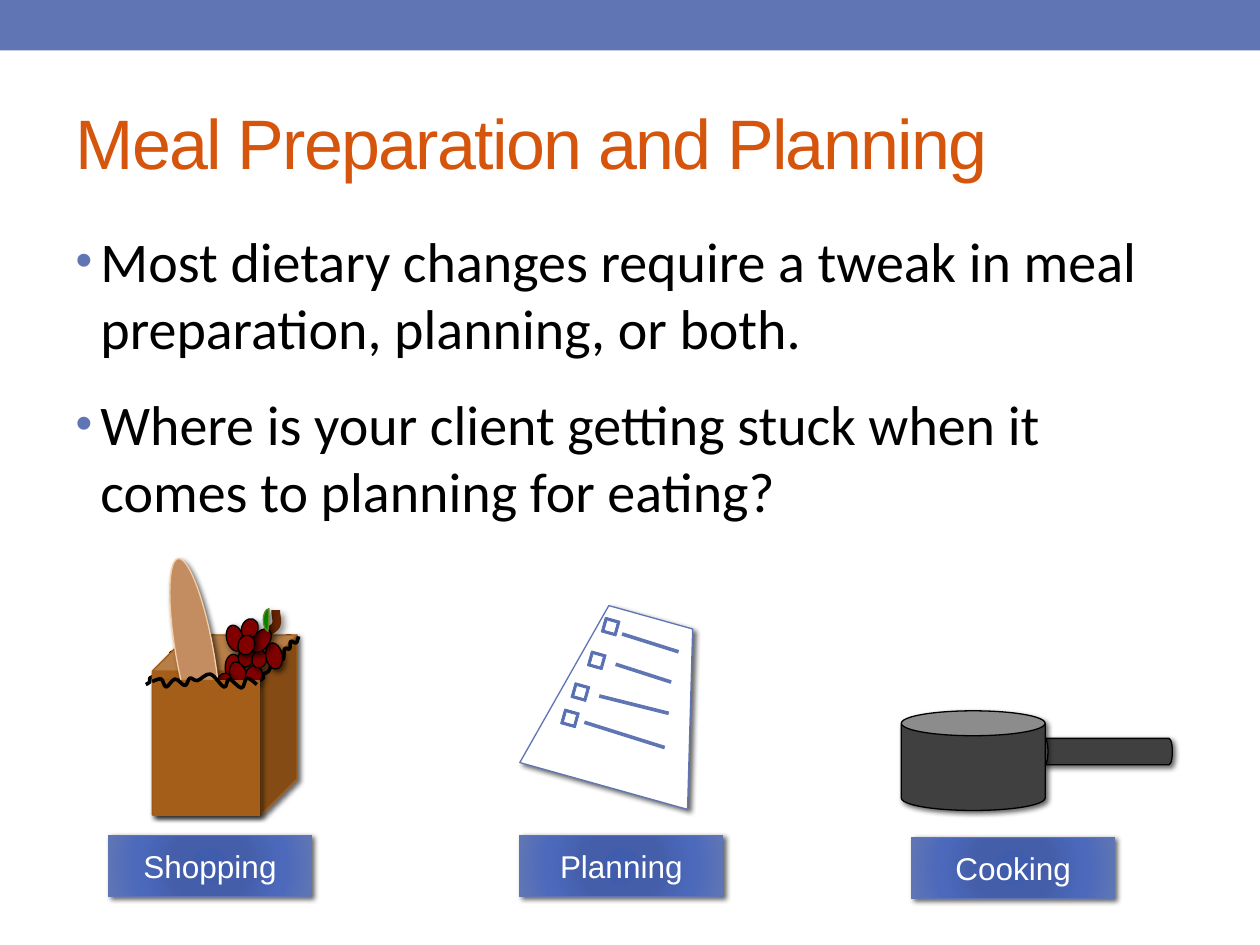
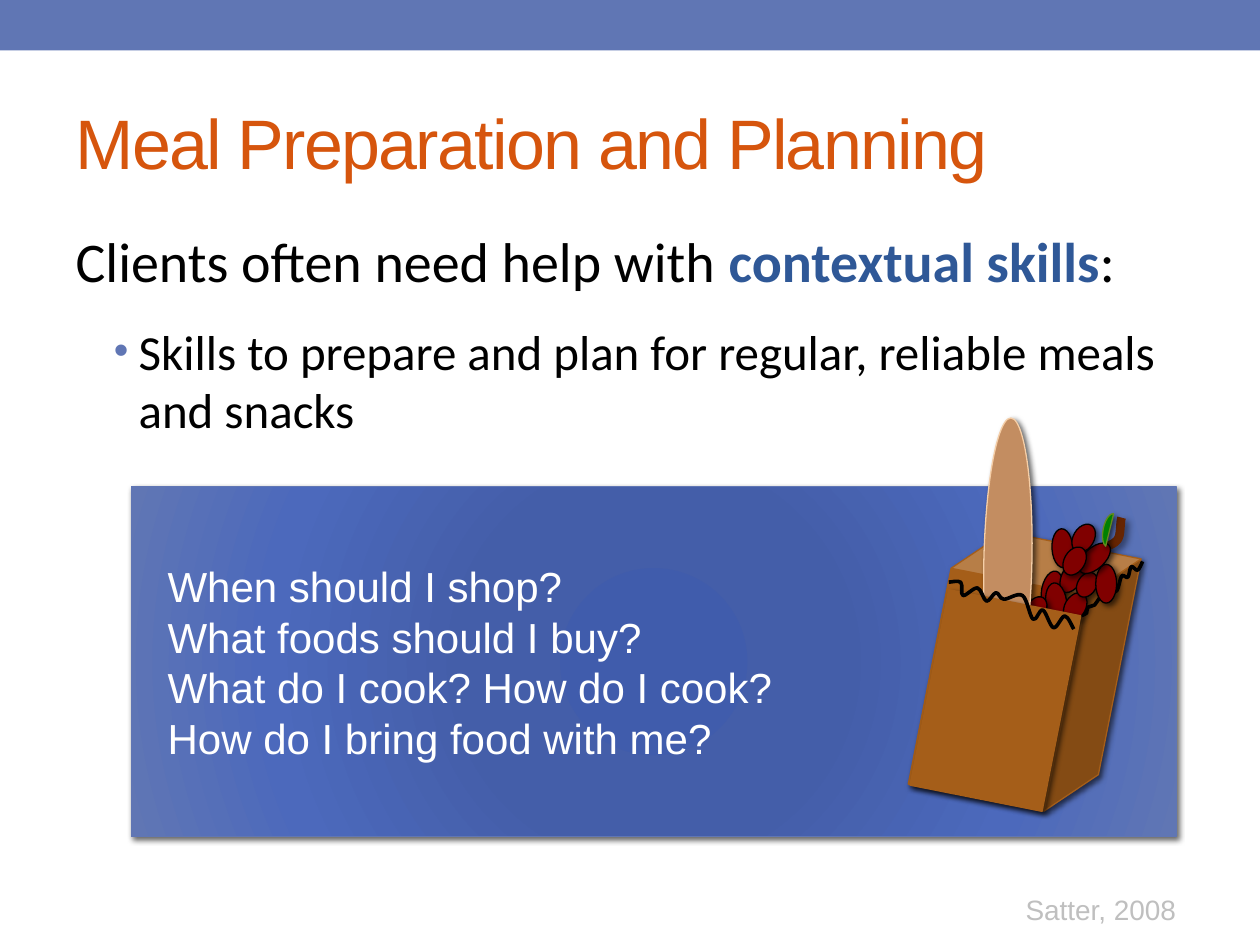
from lxml.etree import SubElement
from pptx import Presentation
from pptx.dml.color import RGBColor
from pptx.enum.shapes import MSO_CONNECTOR, MSO_SHAPE
from pptx.enum.text import MSO_ANCHOR, MSO_AUTO_SIZE, PP_ALIGN
from pptx.oxml import parse_xml
from pptx.oxml.ns import nsdecls, qn
from pptx.util import Cm, Pt

COLORS = {
    "band": "6076B4", "title": "D6550D", "text": "000000", "accent": "2F5897",
    "white": "FFFFFF", "source": "BFBFBF", "paper_bag": "A55E19",
    "bread": "C38D61", "crust": "F5CEA7", "grape": "800000", "stem": "662502",
    "leaf": "008000", "leaf_edge": "63891F", "pan": "404040",
}
GLOW_STOPS = [(0, "405CAC"), (34, "445EA9"), (70, "4C69BC"), (100, "6076B4")]
TITLE = "Meal Preparation and Planning"

FRONT_RIM = [(0, 2.51), (0.18, 2.46), (0.28, 2.62), (0.46, 2.46), (0.66, 2.59),
             (0.76, 2.44), (0.91, 2.49), (1.17, 2.36), (1.45, 2.62),
             (1.55, 2.46), (1.8, 2.64), (1.91, 2.44), (2.11, 2.57)]
SIDE_RIM = [(2.16, 2.49), (2.24, 2.44), (2.24, 2.36), (2.34, 2.31), (2.39, 2.21),
            (2.46, 2.18), (2.51, 2.11), (2.64, 2.06), (2.67, 1.85),
            (2.77, 1.85), (2.79, 1.7), (2.9, 1.73), (2.95, 1.6)]
STEM = [(2.34, 1.5), (2.46, 1.42), (2.51, 1.32), (2.49, 1.12), (2.49, 1.07)]
LARGE, MEDIUM, SMALL = (0.33, 0.53), (0.33, 0.41), (0.3, 0.36)
GRAPES = [(1.47, 1.96, LARGE, 0), (1.75, 1.7, LARGE, 19), (1.57, 2.11, LARGE, 342),
          (1.88, 2.18, MEDIUM, 19), (1.5, 1.37, LARGE, 346), (1.3, 2.34, SMALL, 19),
          (1.42, 2.54, SMALL, 19), (2.01, 1.88, SMALL, 19), (2.29, 1.73, LARGE, 349),
          (2.03, 1.42, LARGE, 36), (1.8, 1.24, MEDIUM, 19), (1.17, 2.59, MEDIUM, 19),
          (1.73, 1.57, MEDIUM, 19)]


def color(name):
    return RGBColor.from_string(COLORS[name])


def add_shadow(shape, alpha=60, blur=3, distance=2):
    shape.shadow.inherit = False
    effects = shape._element.spPr.find(qn("a:effectLst"))
    shadow = SubElement(effects, qn("a:outerShdw"), blurRad=str(Pt(blur)),
                        dist=str(Pt(distance)), dir="2700000", algn="tl", rotWithShape="0")
    tint = SubElement(shadow, qn("a:srgbClr"), val=COLORS["text"])
    SubElement(tint, qn("a:alpha"), val=str(alpha * 1000))


def fill_glow(shape):
    stops = "".join(f'<a:gs pos="{place * 1000}"><a:srgbClr val="{tone}"/></a:gs>'
                    for place, tone in GLOW_STOPS)
    shape.fill.solid()
    properties = shape._element.spPr
    properties.replace(properties.find(qn("a:solidFill")), parse_xml(
        f'<a:gradFill {nsdecls("a")} rotWithShape="1"><a:gsLst>{stops}</a:gsLst>'
        '<a:path path="circle"><a:fillToRect l="100000" t="100000" r="100000" b="100000"/>'
        '</a:path></a:gradFill>'))


def add_part(shapes, kind, box, fill, line, rotation=0, shadow=True):
    part = shapes.add_shape(kind, *[Cm(length) for length in box])
    part.rotation = rotation
    if fill == "glow":
        fill_glow(part)
    else:
        part.fill.solid()
        part.fill.fore_color.rgb = color(fill)
    part.line.color.rgb = color(line)
    part.line.width = Pt(0.75)
    part.shadow.inherit = False
    if shadow:
        add_shadow(part)
    return part


def bend_segments(shape):
    corners = list(shape._element.iter(qn("a:pt")))
    points = [(int(corner.get("x")), int(corner.get("y"))) for corner in corners]
    ends = [points[0], *points, points[-1]]
    for corner, before, start, stop, after in zip(corners[1:], ends, ends[1:],
                                                  ends[2:], ends[3:]):
        segment = corner.getparent()
        bend = parse_xml(f'<a:cubicBezTo {nsdecls("a")}/>')
        leave = [s + (e - b) // 6 for b, s, e in zip(before, start, stop)]
        arrive = [e - (a - s) // 6 for s, e, a in zip(start, stop, after)]
        for x, y in (leave, arrive, stop):
            SubElement(bend, qn("a:pt"), x=str(x), y=str(y))
        segment.getparent().replace(segment, bend)


def add_curve(shapes, points, line="text", width=2.08):
    anchors = [(Cm(x), Cm(y)) for x, y in points]
    builder = shapes.build_freeform(*anchors[0])
    builder.add_line_segments(anchors[1:], close=False)
    shape = builder.convert_to_shape()
    bend_segments(shape)
    shape.fill.background()
    shape.line.color.rgb = color(line)
    shape.line.width = Pt(width)
    shape.shadow.inherit = False
    return shape


def style_font(font, size, name, tone):
    font.size = Pt(size)
    font.name = name
    font.color.rgb = color(tone)


def set_bullet(para, margin, indent, bullet=True):
    properties = para._p.get_or_add_pPr()
    properties.set("marL", str(Cm(margin)))
    properties.set("indent", str(Cm(indent)))
    marks = ('<a:buClr><a:srgbClr val="{}"/></a:buClr><a:buSzPct val="85000"/>'
             '<a:buFont typeface="Arial"/><a:buChar char="•"/>'.format(COLORS["band"])
             if bullet else "<a:buNone/>")
    holder = parse_xml(f'<a:pPr {nsdecls("a")}>{marks}</a:pPr>')
    first_font = properties.find(qn("a:defRPr"))
    for mark in list(holder):
        first_font.addprevious(mark)


def prepare_layout(deck):
    layout = deck.slide_layouts[1]
    for holder, top, height in zip(layout.placeholders, (1.48, 4.44), (2.74, 13.54)):
        holder.left, holder.top = Cm(1.27), Cm(top)
        holder.width, holder.height = Cm(22.86), Cm(height)
    return layout


def add_band(page, layout):
    band = add_part(page.shapes, MSO_SHAPE.RECTANGLE, (0, 0, 25.4, 1.02),
                    "band", "band", shadow=False)
    band.line.fill.background()
    layout.shapes.element.insert(2, band._element)


def add_title(page):
    frame = page.shapes.title.text_frame
    frame.text = TITLE
    frame.vertical_anchor = MSO_ANCHOR.MIDDLE
    frame.auto_size = MSO_AUTO_SIZE.NONE
    para = frame.paragraphs[0]
    para.alignment = PP_ALIGN.LEFT
    style_font(para.font, 40, "Arial", "title")
    para.runs[0]._r.get_or_add_rPr().set("spc", "-100")


def add_body(page, items):
    frame = page.placeholders[1].text_frame
    frame.auto_size = MSO_AUTO_SIZE.NONE
    for number, (spans, level, size, bullet) in enumerate(items):
        para = frame.add_paragraph() if number else frame.paragraphs[0]
        para.level = level
        para.space_before, para.space_after = Pt(size * 0.2), Pt(10)
        style_font(para.font, size, "Calibri", "text")
        for text, strong in spans:
            span = para.add_run()
            span.text = text
            if strong:
                span.font.bold = True
                span.font.color.rgb = color("accent")
        if bullet:
            set_bullet(para, 0.5 + 0.77 * level, -0.5)
        else:
            set_bullet(para, 0, 0, bullet=False)


def add_panel(page, box, lines, size, alignment, margin=0):
    panel = add_part(page.shapes, MSO_SHAPE.RECTANGLE, box, "glow", "band")
    frame = panel.text_frame
    frame.vertical_anchor = MSO_ANCHOR.MIDDLE
    frame.text = "\n".join(lines)
    for para in frame.paragraphs:
        para.alignment = alignment
        style_font(para.font, size, "Arial", "white")
        para._p.get_or_add_pPr().set("marL", str(Cm(margin)))


def add_grocery_bag(page, left, top, width, height, rotation=0, rim_turn=0):
    group = page.shapes.add_group_shape()
    parts = group.shapes
    add_part(parts, MSO_SHAPE.CUBE, (0, 1.57, 2.92, 3.63), "paper_bag", "paper_bag")
    add_curve(parts, SIDE_RIM)
    add_shadow(add_curve(parts, STEM, "stem", 5), 43, 4, 3)
    for x, y, size, turn in GRAPES:
        add_part(parts, MSO_SHAPE.OVAL, (x, y, *size), "grape", "text", turn)
    leaf = add_part(parts, MSO_SHAPE.CHORD, (2.24, 1.04, 0.23, 0.46), "leaf", "leaf_edge")
    leaf.adjustments[0], leaf.adjustments[1] = 57.06, 162
    add_part(parts, MSO_SHAPE.OVAL, (0.48, 0, 0.76, 3.91), "bread", "crust", 350)
    add_part(parts, MSO_SHAPE.RECTANGLE, (0.03, 2.49, 2.13, 2.72), "paper_bag", "paper_bag")
    add_curve(parts, FRONT_RIM).rotation = rim_turn
    group.left, group.top = Cm(left), Cm(top)
    group.width, group.height = Cm(width), Cm(height)
    group.rotation = rotation


def add_far_rims(page, left, top):
    add_curve(page.shapes, [(left + 0.74 + x * 1.04, top + 0.49 + y * 0.45)
                            for x, y in FRONT_RIM])
    add_curve(page.shapes, [(left - 2.29 + x, top + 0.08 + y) for x, y in SIDE_RIM])


def add_checklist(page, left, top):
    parts = page.shapes.add_group_shape().shapes
    add_part(parts, MSO_SHAPE.TRAPEZOID, (left, top, 3.51, 3.53), "white", "band", 15.6)
    entries = [(1.65, 0.4, 2.79, 0.76), (1.52, 1.01, 2.64, 1.37),
               (1.19, 1.65, 2.59, 2.0), (0.89, 2.18, 2.51, 2.69)]
    for x1, y1, x2, y2 in entries:
        rule = parts.add_connector(MSO_CONNECTOR.STRAIGHT, Cm(left + x1), Cm(top + y1),
                                   Cm(left + x2), Cm(top + y2))
        rule.line.color.rgb = color("band")
        rule.line.width = Pt(2.08)
        SubElement(rule._element.spPr, qn("a:effectLst"))
    for x, y in [(1.27, 0.1), (0.99, 0.78), (0.66, 1.42), (0.45, 1.95)]:
        add_part(parts, MSO_SHAPE.FRAME, (left + x, top + y, 0.3, 0.3),
                 "glow", "band", 195.6, shadow=False)


def add_saucepan(page, left, top):
    parts = page.shapes.add_group_shape().shapes
    add_part(parts, MSO_SHAPE.CAN, (left + 3.88, top - 0.5, 0.53, 2.64), "pan", "text", 270)
    add_part(parts, MSO_SHAPE.CAN, (left, top, 2.9, 2.01), "pan", "text")


def add_source(page, text):
    note = page.shapes.add_textbox(Cm(16.8), Cm(17.86), Cm(7.16), Cm(0.94))
    note.text_frame.word_wrap = True
    note.text_frame.text = text
    para = note.text_frame.paragraphs[0]
    para.alignment = PP_ALIGN.RIGHT
    style_font(para.font, 16, "Arial", "source")


def build_steps_slide(page):
    add_title(page)
    add_body(page, [
        ([("Most dietary changes require a tweak in meal preparation, planning, or both.",
           False)], 0, 32, True),
        ([("Where is your client getting stuck when it comes to planning for eating?",
           False)], 0, 32, True),
    ])
    for label, left, top in [("Shopping", 2.19, 16.84), ("Planning", 10.48, 16.84),
                             ("Cooking", 18.38, 16.88)]:
        add_panel(page, (left, top, 4.09, 1.23), [label], 18, PP_ALIGN.CENTER)
    add_checklist(page, 10.89, 12.38)
    add_saucepan(page, 18.17, 14.33)
    add_far_rims(page, 3.07, 11.23)
    add_grocery_bag(page, 3.07, 11.23, 2.95, 5.21)


def build_skills_slide(page):
    add_title(page)
    add_body(page, [
        ([("Clients often need help with ", False), ("contextual skills", True),
          (":", False)], 0, 32, False),
        ([("Skills to prepare and plan for regular, reliable meals and snacks", False)],
         1, 28, True),
    ])
    add_source(page, "Satter, 2008")
    add_panel(page, (2.65, 9.81, 21.06, 7.06),
              ["When should I shop?", "What foods should I buy?",
               "What do I cook? How do I cook?", "How do I bring food with me?"],
              24, PP_ALIGN.LEFT, 0.48)
    add_grocery_bag(page, 19.02, 8.56, 3.76, 7.7, 11.2, 7.5)


def main():
    deck = Presentation()
    deck.slide_width, deck.slide_height = Cm(25.4), Cm(19.05)
    layout = prepare_layout(deck)
    steps, skills = [deck.slides.add_slide(layout) for _ in range(2)]
    add_band(steps, layout)
    build_steps_slide(steps)
    build_skills_slide(skills)
    deck.save("out.pptx")


if __name__ == "__main__":
    main()
